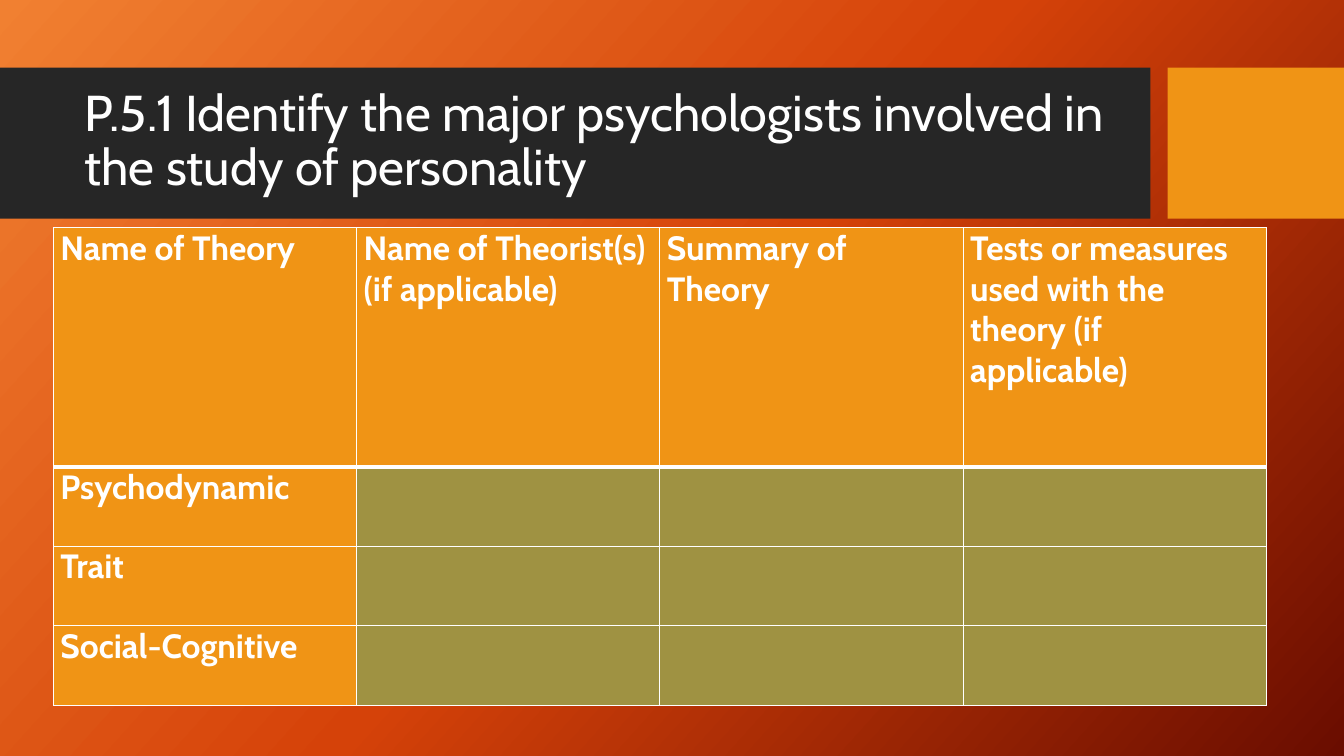
from copy import deepcopy

from lxml.etree import SubElement
from pptx import Presentation
from pptx.dml.color import RGBColor
from pptx.enum.shapes import MSO_SHAPE
from pptx.enum.text import MSO_ANCHOR, MSO_AUTO_SIZE, PP_ALIGN
from pptx.oxml.ns import qn
from pptx.util import Inches, Pt

WHITE = RGBColor(0xFF, 0xFF, 0xFF)
CHARCOAL = RGBColor(0x26, 0x26, 0x26)
AMBER = RGBColor(0xF0, 0x94, 0x15)
OLIVE = RGBColor(0x9F, 0x92, 0x42)
GRADIENT = [
    (0, RGBColor(0xF1, 0x80, 0x31)),
    (0.5, RGBColor(0xD5, 0x42, 0x09)),
    (1, RGBColor(0x6A, 0x0D, 0x00)),
]
FONT = "Cabin"
SLIDE_WIDTH, SLIDE_HEIGHT = Inches(13.33), Inches(7.5)

TITLE = "P.5.1 Identify the major psychologists involved in the study of personality"
HEADINGS = [
    "Name of Theory",
    "Name of Theorist(s)\n(if applicable)",
    "Summary of Theory",
    "Tests or measures used with the theory (if applicable)",
]
THEORIES = ["Psychodynamic", "Trait", "Social-Cognitive"]
ROWS = [HEADINGS] + [[theory, "", "", ""] for theory in THEORIES]
ROW_SHARES = [3, 1, 1, 1]


def write_text(frame, text, size, bold=False, line_spacing=None):
    frame.text = text
    for para in frame.paragraphs:
        para.alignment = PP_ALIGN.LEFT
        para.line_spacing = line_spacing
        for span in para.runs:
            span.font.name = FONT
            span.font.size = Pt(size)
            span.font.bold = bold
            span.font.color.rgb = WHITE


def paint_background(page):
    fill = page.background.fill
    fill.gradient()
    fill.gradient_angle = 360 - 42
    stop_list = page.element.find(".//" + qn("a:gsLst"))
    stop_list.append(deepcopy(stop_list[-1]))
    for stop, (position, color) in zip(fill.gradient_stops, GRADIENT):
        stop.position = position
        stop.color.rgb = color


def add_bar(page, left, top, width, height, color):
    bar = page.shapes.add_shape(MSO_SHAPE.RECTANGLE, left, top, width, height)
    bar.shadow.inherit = False
    bar.fill.solid()
    bar.fill.fore_color.rgb = color
    bar.line.fill.background()


def build_header(page, top, height):
    """Lay the dark band, the amber block and the title across the slide."""
    band_width, block_left = Inches(11.41), Inches(11.58)
    add_bar(page, 0, top, band_width, height, CHARCOAL)
    add_bar(page, block_left, top, SLIDE_WIDTH - block_left, height, AMBER)

    title = page.shapes.title
    title.element.getparent().append(title.element)  # bring in front of the band
    title.left, title.top = Inches(0.74), top + Inches(0.15)
    title.width, title.height = Inches(10.51), Inches(1.18)
    frame = title.text_frame
    frame.word_wrap = True
    frame.auto_size = MSO_AUTO_SIZE.NONE
    frame.vertical_anchor = MSO_ANCHOR.MIDDLE
    write_text(frame, TITLE, 36, line_spacing=0.9)


def set_borders(cell, **widths):
    """Draw white edges; widths are points keyed by L, R, T and B."""
    properties = cell._tc.get_or_add_tcPr()
    for side, width in widths.items():
        line = SubElement(properties, qn(f"a:ln{side}"), w=str(Pt(width)))
        solid = SubElement(line, qn("a:solidFill"))
        SubElement(solid, qn("a:srgbClr"), val=str(WHITE))


def build_theory_table(page, left, top, width, height):
    table = page.shapes.add_table(
        len(ROWS), len(HEADINGS), left, top, width, height
    ).table
    for column in table.columns:
        column.width = width // len(HEADINGS)
    for row, share in zip(table.rows, ROW_SHARES):
        row.height = height * share // sum(ROW_SHARES)

    for row_index, texts in enumerate(ROWS):
        for column_index, text in enumerate(texts):
            cell = table.cell(row_index, column_index)
            set_borders(cell, L=1, R=1,
                        T=3 if row_index == 1 else 1,
                        B=3 if row_index == 0 else 1)
            cell.fill.solid()
            cell.fill.fore_color.rgb = AMBER if text else OLIVE
            cell.margin_left = cell.margin_right = Inches(0.07)
            cell.margin_top = cell.margin_bottom = 0
            if text:
                write_text(cell.text_frame, text, 24, bold=True)


def main():
    deck = Presentation()
    deck.slide_width, deck.slide_height = SLIDE_WIDTH, SLIDE_HEIGHT
    page = deck.slides.add_slide(deck.slide_layouts[5])
    paint_background(page)
    build_header(page, Inches(0.67), Inches(1.5))
    build_theory_table(page, Inches(0.53), Inches(2.26), Inches(12.03), Inches(4.74))
    deck.save("out.pptx")


if __name__ == "__main__":
    main()
